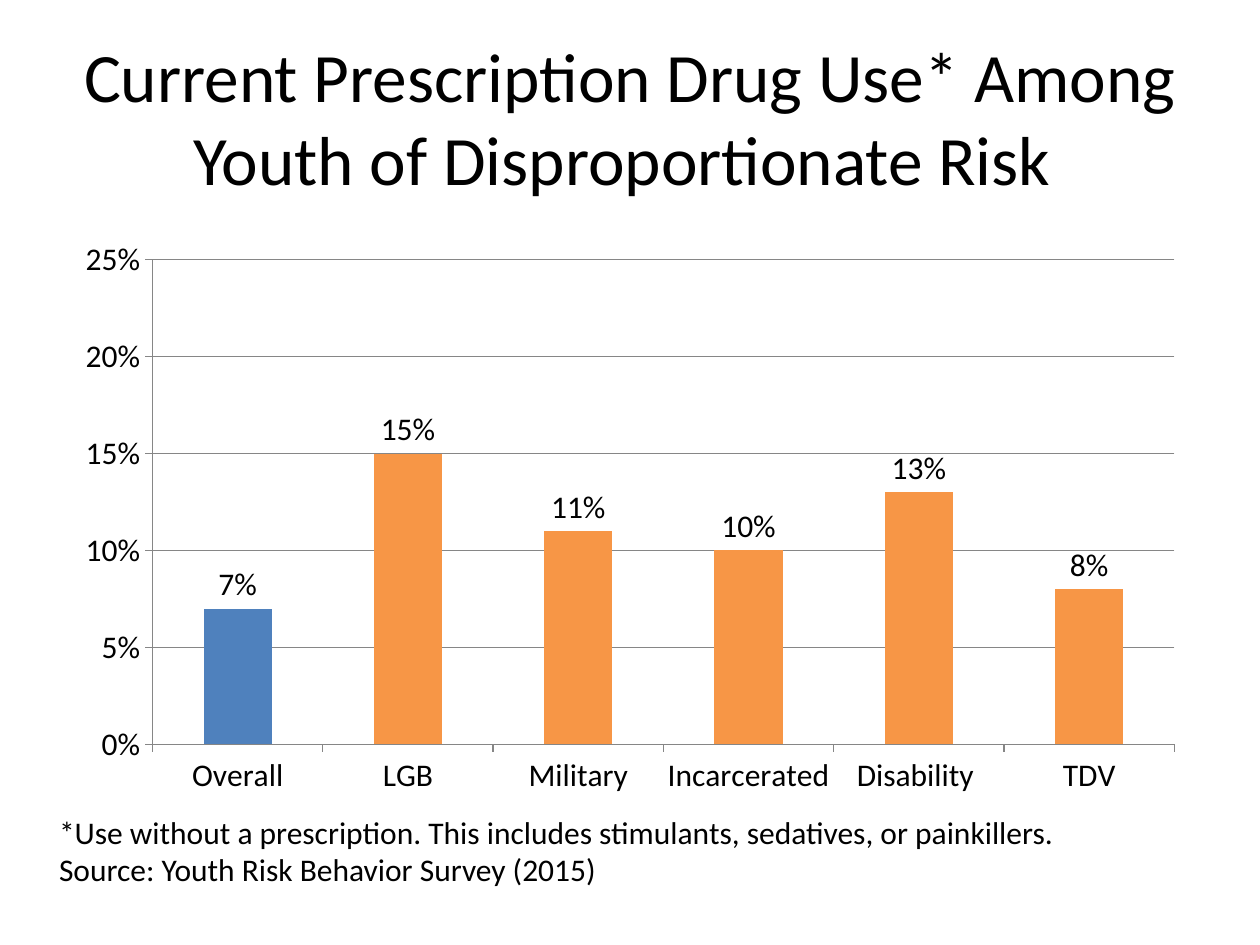
import pptx
import pptx.chart.data
import pptx.dml.color
import pptx.enum.chart
import pptx.enum.text
import pptx.util

Pt = pptx.util.Pt
COLORS = {"text": "000000", "overall": "4F81BD", "group": "F79646", "line": "868686"}
RATES = {
    "Overall": 0.07,
    "LGB": 0.15,
    "Military": 0.11,
    "Incarcerated": 0.10,
    "Disability ": 0.13,
    "TDV": 0.08,
}


def rgb(name):
    return pptx.dml.color.RGBColor.from_string(COLORS[name])


def apply(obj, values):
    for name, value in values.items():
        setattr(obj, name, value)


class Deck:
    font = "Calibri"

    def __init__(self, width, height):
        self.prs = pptx.Presentation()
        apply(self.prs, {"slide_width": Pt(width), "slide_height": Pt(height)})
        self.s = None

    def slide(self):
        self.s = self.prs.slides.add_slide(self.prs.slide_layouts[5])

    def style(self, font, size):
        apply(font, {"name": self.font, "size": Pt(size)})
        font.color.rgb = rgb("text")

    def title(self, text, left, top, width, height, size):
        sp = self.s.shapes.title
        apply(sp, {"left": Pt(left), "top": Pt(top), "width": Pt(width), "height": Pt(height)})
        tf = sp.text_frame
        apply(tf, {"word_wrap": True, "vertical_anchor": pptx.enum.text.MSO_ANCHOR.MIDDLE})
        p = tf.paragraphs[0]
        p.alignment = pptx.enum.text.PP_ALIGN.CENTER
        r = p.add_run()
        r.text = text
        self.style(r.font, size)

    def note(self, lines, left, top, width, height, size):
        sp = self.s.shapes.add_textbox(Pt(left), Pt(top), Pt(width), Pt(height))
        tf = sp.text_frame
        tf.word_wrap = True
        tf.text = "\n".join(lines)
        for p in tf.paragraphs:
            self.style(p.runs[0].font, size)

    def column_chart(self, rates, left, top, width, height, size):
        data = pptx.chart.data.CategoryChartData(number_format="0%")
        data.categories = list(rates)
        data.add_series("Series 1", list(rates.values()))
        kind = pptx.enum.chart.XL_CHART_TYPE.COLUMN_CLUSTERED
        chart = self.s.shapes.add_chart(
            kind, Pt(left), Pt(top), Pt(width), Pt(height), data
        ).chart
        apply(chart, {"has_legend": False, "has_title": False})
        self.style(chart.font, size)

        axis = chart.value_axis
        apply(axis, {
            "minimum_scale": 0,
            "maximum_scale": 0.25,
            "major_unit": 0.05,
            "has_major_gridlines": True,
        })
        apply(axis.tick_labels, {"number_format": "0%", "number_format_is_linked": False})
        for ax in (axis, chart.category_axis):
            ax.major_tick_mark = pptx.enum.chart.XL_TICK_MARK.OUTSIDE
            ax.format.line.color.rgb = rgb("line")
        axis.major_gridlines.format.line.color.rgb = rgb("line")

        plot = chart.plots[0]
        apply(plot, {"gap_width": 150, "vary_by_categories": False, "has_data_labels": True})
        apply(plot.data_labels, {
            "show_value": True,
            "number_format": "0%",
            "number_format_is_linked": False,
            "position": pptx.enum.chart.XL_LABEL_POSITION.OUTSIDE_END,
        })
        self.style(plot.data_labels.font, size)

        series = plot.series[0]
        fills = [series.format.fill, series.points[0].format.fill]
        for fill, color in zip(fills, ("group", "overall")):
            fill.solid()
            fill.fore_color.rgb = rgb(color)


def main():
    deck = Deck(720, 540)
    deck.slide()
    deck.title(
        "Current Prescription Drug Use* Among Youth of Disproportionate Risk ",
        36, 21.6, 648, 90, 39.6,
    )
    deck.note(
        [
            "*Use without a prescription. This includes stimulants, sedatives, or painkillers.",
            "Source: Youth Risk Behavior Survey (2015)",
        ],
        26.64, 460.8, 639.36, 51.12, 18,
    )
    deck.column_chart(RATES, 36, 131, 648, 329.8, 18)
    deck.prs.save("out.pptx")


if __name__ == "__main__":
    main()
